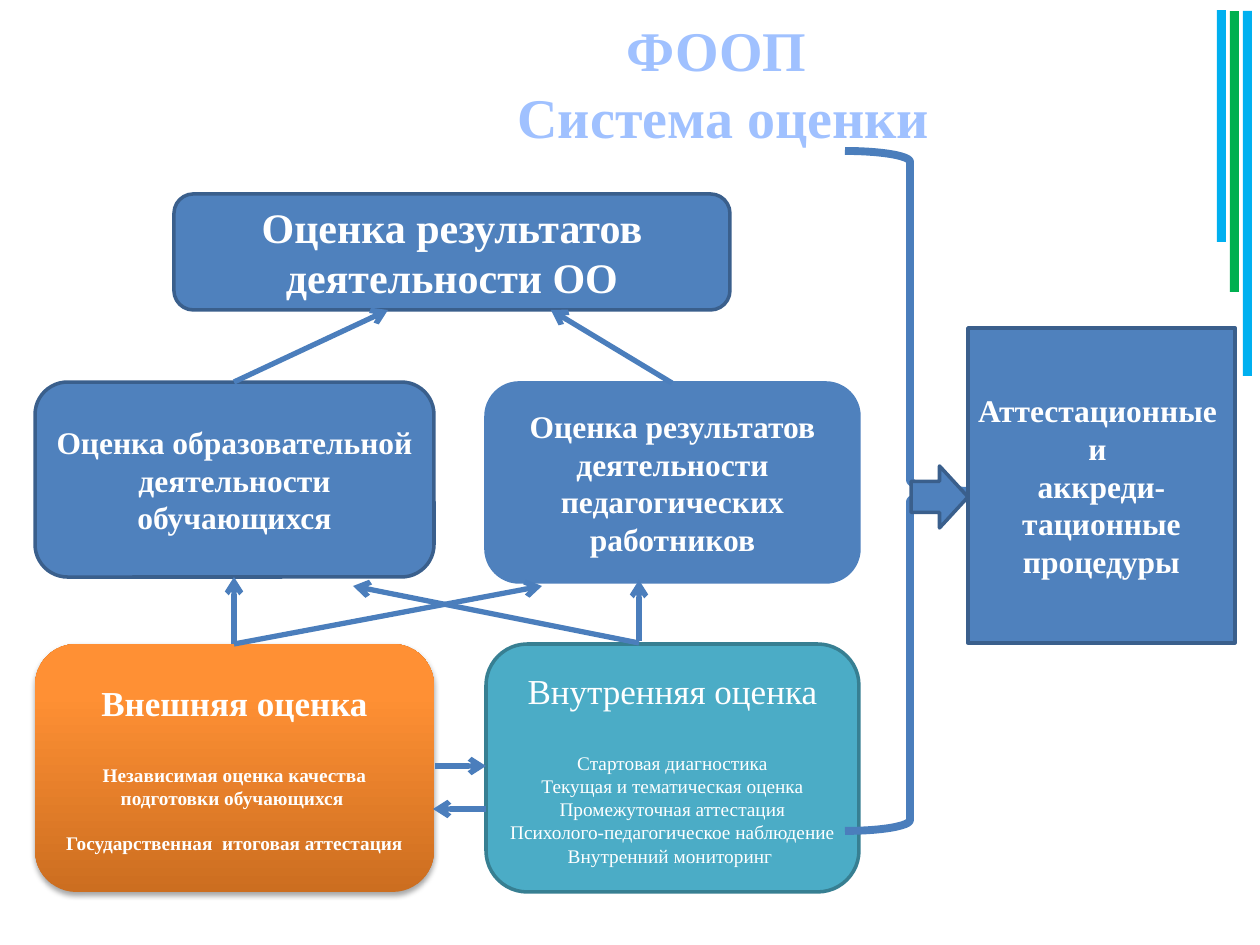
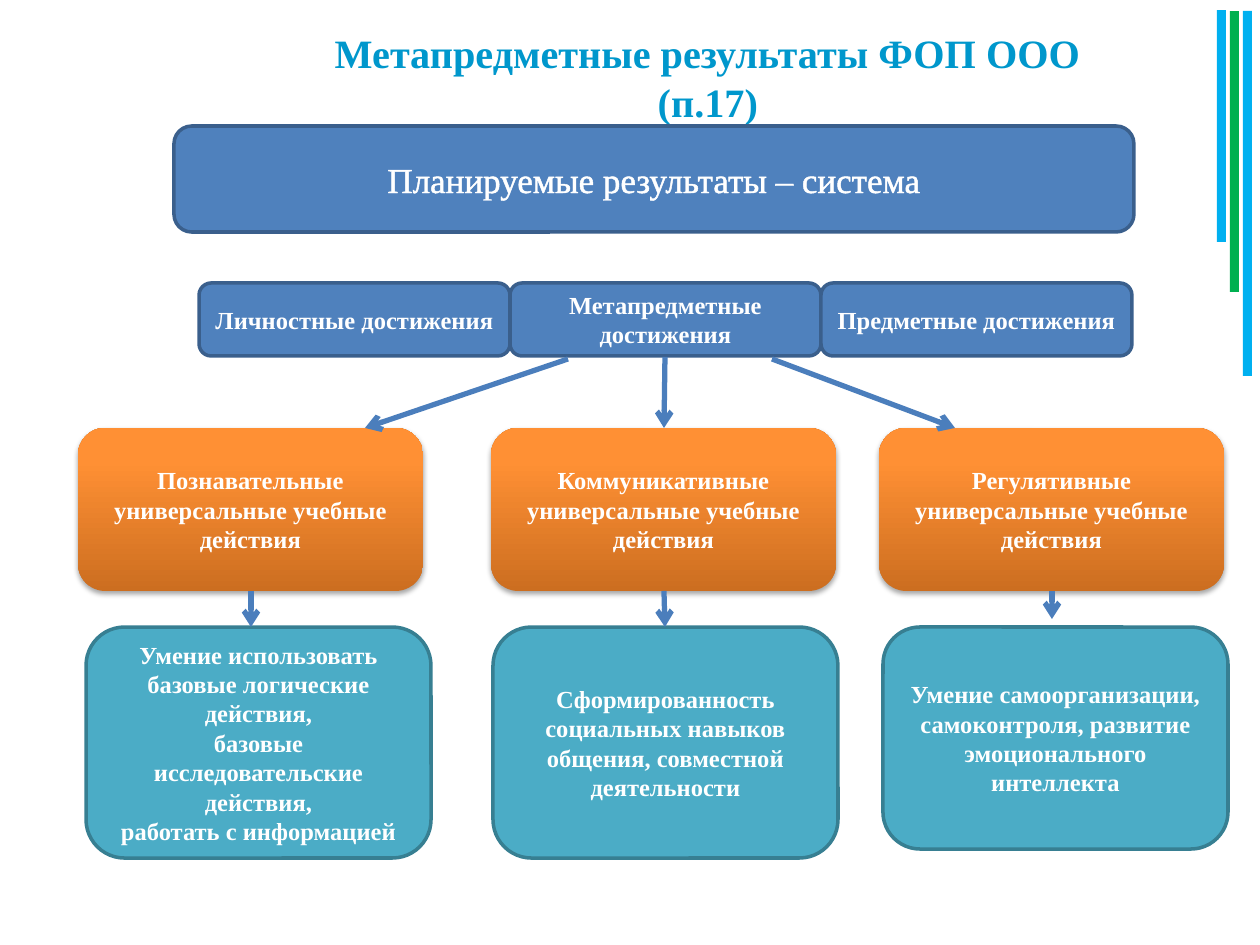
from lxml import etree
from pptx import Presentation
from pptx.dml.color import RGBColor
from pptx.enum.shapes import MSO_CONNECTOR, MSO_SHAPE
from pptx.enum.text import MSO_ANCHOR, MSO_AUTO_SIZE, PP_ALIGN
from pptx.oxml.ns import qn
from pptx.util import Emu, Pt

PX_PER_INCH = 126
FONT = "Times New Roman"
TITLE_ONLY = 5
RECT = MSO_SHAPE.RECTANGLE
ROUNDED = MSO_SHAPE.ROUNDED_RECTANGLE
BRACE = MSO_SHAPE.RIGHT_BRACE
BLOCK_ARROW = MSO_SHAPE.RIGHT_ARROW
STRAIGHT = MSO_CONNECTOR.STRAIGHT
CENTER = PP_ALIGN.CENTER
MIDDLE = MSO_ANCHOR.MIDDLE
NO_AUTOFIT = MSO_AUTO_SIZE.NONE

COLORS = {
    "white": "FFFFFF", "black": "000000", "blue": "4F81BD", "blue edge": "3A5F8C",
    "teal": "4BACC6", "teal edge": "377F92", "orange": "FF9034",
    "dark orange": "CC6E20", "arrow": "4B7EBC", "sky": "00B0F0", "green": "00B050",
    "pale title": "A0C1FF", "bright title": "0097CC",
}
BANDS = [("sky", 10, 232), ("green", 11, 281), ("sky", 11, 365)]


def px(length):
    return Emu(round(length * 914400 / PX_PER_INCH))


def rgb(name):
    return RGBColor.from_string(COLORS[name])


def set_all(target, values):
    for key, value in values.items():
        setattr(target, key, value)


class Deck:
    def __init__(self):
        self.prs = Presentation()
        self.prs.slide_width, self.prs.slide_height = px(1260), px(945)
        self.slide = None

    def new_slide(self, title, at, size, color, inset=12):
        """Start a slide with its title and the coloured bands at the right edge."""
        self.slide = self.prs.slides.add_slide(self.prs.slide_layouts[TITLE_ONLY])
        heading = self.slide.shapes.title
        set_all(heading, dict(zip(("left", "top", "width", "height"), map(px, at))))
        self.put_text(heading, [(title, size)], color, True, (inset, 6))
        for i, (band_color, top, height) in enumerate(BANDS):
            self.shape(RECT, (1217 + 13 * i, top, 9, height), band_color)

    def put_text(self, shape, paragraphs, color="white", bold=True, insets=(9, 5)):
        """Fill a shape with paragraphs given as (text, size, space before)."""
        frame = shape.text_frame
        side, edge = map(px, insets)
        set_all(frame, {
            "word_wrap": True, "auto_size": NO_AUTOFIT, "vertical_anchor": MIDDLE,
            "margin_left": side, "margin_right": side,
            "margin_top": edge, "margin_bottom": edge,
        })
        for i, (text, size, *space) in enumerate(paragraphs):
            paragraph = frame.add_paragraph() if i else frame.paragraphs[0]
            paragraph.text = text
            set_all(paragraph, {"alignment": CENTER,
                                "space_before": Pt(space[0] if space else 0)})
            for run in paragraph.runs:
                set_all(run.font, {"name": FONT, "size": Pt(size), "bold": bold})
                run.font.color.rgb = rgb(color)

    def shape(self, kind, at, fill=None, edge=None, width=2):
        shape = self.slide.shapes.add_shape(kind, *map(px, at))
        shape.shadow.inherit = False
        if fill:
            shape.fill.solid()
            shape.fill.fore_color.rgb = rgb(fill)
        else:
            shape.fill.background()
        if edge:
            shape.line.color.rgb = rgb(edge)
            shape.line.width = Pt(width)
        else:
            shape.line.fill.background()
        return shape

    def box(self, at, paragraphs, fill="blue", edge="blue edge", kind=ROUNDED, bold=True):
        box = self.shape(kind, at, fill, edge)
        self.put_text(box, paragraphs, bold=bold)
        return box

    def glossy_box(self, at, paragraphs):
        """Orange box with a vertical gradient and a soft shadow below."""
        box = self.box(at, paragraphs, "orange", None)
        box.fill.gradient()
        box.fill.gradient_angle = 90
        for stop, name, position in zip(box.fill.gradient_stops,
                                        ("dark orange", "orange"), (0, 0.8)):
            stop.color.rgb = rgb(name)
            stop.position = position
        effects = box._element.spPr.find(qn("a:effectLst"))
        shadow = etree.SubElement(effects, qn("a:outerShdw"), blurRad=str(Pt(3.1)),
                                  dist=str(Pt(1.8)), dir="5400000", rotWithShape="0")
        tint = etree.SubElement(shadow, qn("a:srgbClr"), val=COLORS["black"])
        etree.SubElement(tint, qn("a:alpha"), val="35000")

    def arrow(self, *ends):
        arrow = self.slide.shapes.add_connector(STRAIGHT, *map(px, ends))
        arrow.line.color.rgb = rgb("arrow")
        arrow.line.width = Pt(3)
        line = arrow._element.spPr.find(qn("a:ln"))
        etree.SubElement(line, qn("a:tailEnd"), type="arrow")
        etree.SubElement(arrow._element.spPr, qn("a:effectLst"))

    def outline_text(self, shape, color, width):
        for run in shape.text_frame.paragraphs[0].runs:
            line = etree.Element(qn("a:ln"), w=str(Pt(width)))
            fill = etree.SubElement(line, qn("a:solidFill"))
            etree.SubElement(fill, qn("a:srgbClr"), val=COLORS[color])
            run._r.get_or_add_rPr().insert(0, line)


def assessment_system(deck):
    deck.new_slide("ФООП\v Система оценки", (239, 25, 955, 115), 32, "pale title")
    deck.box((174, 194, 556, 116), [("Оценка результатов деятельности ОО", 24)])
    deck.glossy_box((35, 644, 399, 248), [
        ("Внешняя оценка", 20),
        ("Независимая оценка качества подготовки обучающихся ", 11, 23),
        ("Государственная  итоговая аттестация", 11, 12.65),
    ])
    procedures = ["Текущая и тематическая оценка", "Промежуточная аттестация",
                  "Психолого-педагогическое наблюдение", "Внутренний мониторинг "]
    deck.box((486, 644, 373, 248),
             [("Внутренняя оценка", 20), ("Стартовая диагностика", 11, 23)]
             + [(procedure, 11) for procedure in procedures],
             "teal", "teal edge", bold=False)
    deck.box((35, 382, 399, 195),
             [("Оценка образовательной деятельности обучающихся", 18)])
    deck.box((486, 383, 373, 199),
             [("Оценка результатов деятельности педагогических работников", 18)],
             edge="blue")
    for ends in [(234, 644, 234, 577), (639, 643, 353, 586), (234, 644, 542, 586),
                 (639, 641, 639, 580), (234, 382, 388, 310), (672, 383, 551, 310)]:
        deck.arrow(*ends)
    deck.shape(BRACE, (845, 151, 130, 680), None, "arrow", 4.5)
    deck.shape(BLOCK_ARROW, (911, 466, 57, 62), "blue", "blue edge")
    deck.box((968, 328, 267, 315),
             [("Аттестационные ", 18), ("и ", 18),
              ("аккреди-тационные процедуры", 18)], kind=RECT)
    deck.arrow(435, 766, 486, 766)
    deck.arrow(486, 809, 433, 809)


def meta_subject_results(deck):
    deck.new_slide("Метапредметные результаты ФОП ООО (п.17)", (267, 28, 882, 98),
                   23, "bright title", inset=20)
    for i, achievement in enumerate(["Личностные", "Метапредметные", "Предметные"]):
        deck.box((199 + 311 * i, 283, 311, 73), [(f"{achievement} достижения", 14)])
    columns = [
        ("Познавательные", 78, 86, 231,
         ["Умение использовать базовые логические действия,",
          "базовые исследовательские действия,", "работать с информацией"]),
        ("Коммуникативные", 491, 493, 231,
         ["Сформированность социальных навыков общения, совместной деятельности"]),
        ("Регулятивные", 879, 883, 222,
         ["Умение самоорганизации, самоконтроля, развитие эмоционального интеллекта"]),
    ]
    for actions, actions_left, skills_left, skills_height, skills in columns:
        deck.glossy_box((actions_left, 428, 345, 163),
                        [(f"{actions} универсальные учебные действия", 14)])
        deck.box((skills_left, 627, 345, skills_height),
                 [(skill, 14) for skill in skills], "teal", "teal edge")
    for ends in [(568, 359, 365, 428), (772, 359, 955, 428), (665, 357, 664, 428),
                 (251, 591, 251, 627), (664, 591, 665, 627), (1052, 591, 1052, 619)]:
        deck.arrow(*ends)
    banner = deck.box((174, 126, 960, 106),
                      [(" Планируемые результаты – система ", 20)], bold=False)
    deck.outline_text(banner, "white", 1.45)


def main():
    deck = Deck()
    assessment_system(deck)
    meta_subject_results(deck)
    deck.prs.save("out.pptx")


if __name__ == "__main__":
    main()
